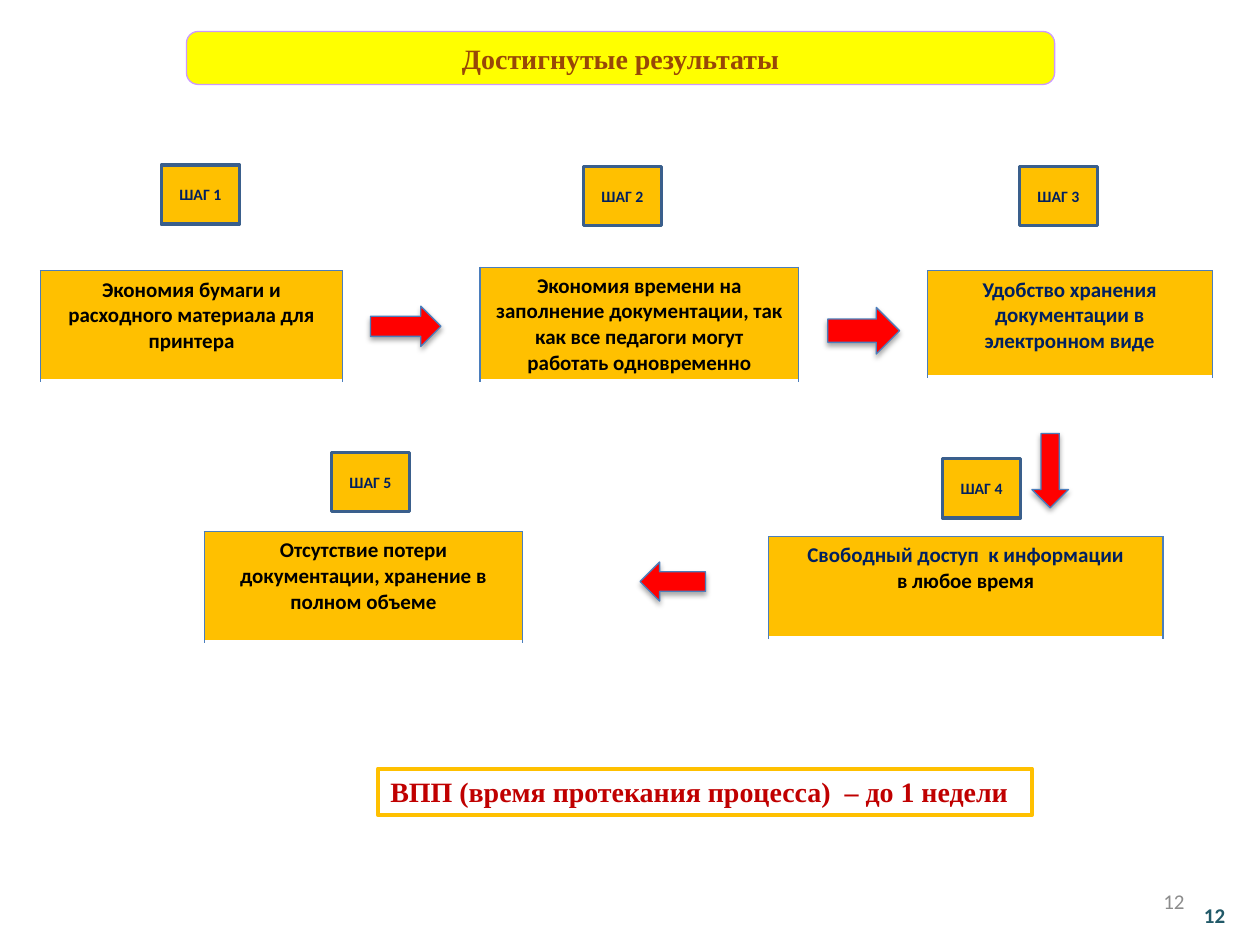
"""Build the slide of achieved results with five steps."""
import dataclasses

import lxml.etree
import pptx
import pptx.dml.color
import pptx.enum.shapes
import pptx.enum.text
import pptx.oxml.ns
import pptx.util

Inches = pptx.util.Inches
Shape = pptx.enum.shapes.MSO_SHAPE
Align = pptx.enum.text.PP_ALIGN
Anchor = pptx.enum.text.MSO_ANCHOR


@dataclasses.dataclass(frozen=True)
class Theme:
    """Colours, fonts and sizes of the slide."""

    body_font: str = "Calibri"
    display_font: str = "Times New Roman"
    gold: str = "FFC000"
    yellow: str = "FFFF00"
    red: str = "FF0000"
    crimson: str = "C00000"
    brown: str = "984807"
    lilac: str = "CC99FF"
    navy: str = "002060"
    black: str = "000000"
    white: str = "FFFFFF"
    grey: str = "8C8C8C"
    teal: str = "215968"
    edge: str = "4B7EBC"
    step_edge: str = "3A5F8C"
    step_size: int = 9
    body_size: int = 12
    display_size: int = 16


def rgb(colour):
    """Turn a hex string into a colour."""
    return pptx.dml.color.RGBColor.from_string(colour)


def add_child(parent, tag, **attributes):
    """Append a DrawingML element and return it."""
    child = lxml.etree.SubElement(parent, pptx.oxml.ns.qn(tag))
    for name, value in attributes.items():
        child.set(name, str(value))
    return child


class SlideBuilder:
    """Draws elements on one slide in one style."""

    def __init__(self, page, theme):
        """Keep the slide and the theme."""
        self.page = page
        self.theme = theme

    def add_lines(self, frame, lines, align=Align.CENTER, **font_format):
        """Set lines of (text, colour) as paragraphs."""
        values = {"name": self.theme.body_font, "bold": True, **font_format}
        values["size"] = pptx.util.Pt(values["size"])
        frame.word_wrap = True
        for index, (text, colour) in enumerate(lines):
            para = frame.add_paragraph() if index else frame.paragraphs[0]
            para.alignment = align
            span = para.add_run()
            span.text = text
            for name, value in values.items():
                setattr(span.font, name, value)
            span.font.color.rgb = rgb(colour)

    def shape(self, kind, place, fill, edge, width):
        """Add a preset shape without a shadow."""
        box = self.page.shapes.add_shape(kind, *map(Inches, place))
        box.shadow.inherit = False
        if fill:
            box.fill.solid()
            box.fill.fore_color.rgb = rgb(fill)
        else:
            box.fill.background()
        box.line.color.rgb = rgb(edge)
        box.line.width = pptx.util.Pt(width)
        return box

    def step(self, number, left, top):
        """Add a step label."""
        theme = self.theme
        box = self.shape(Shape.RECTANGLE, (left, top, 0.62, 0.47), theme.gold, theme.step_edge, 2)
        self.add_lines(box.text_frame, [(f"ШАГ {number}", theme.navy)], size=theme.step_size)

    def banner(self, kind, place, text, colour, fill, edge, width, align):
        """Add a framed line of display text."""
        box = self.shape(kind, place, fill, edge, width)
        box.text_frame.vertical_anchor = Anchor.TOP
        self.add_lines(box.text_frame, [(text, colour)], align,
                       name=self.theme.display_font, size=self.theme.display_size)
        return box

    def arrow(self, place, rotation):
        """Add a red block arrow with a soft shadow."""
        box = self.shape(Shape.RIGHT_ARROW, place, self.theme.red, self.theme.edge, 0.75)
        box.rotation = rotation
        effects = box._element.spPr.find(pptx.oxml.ns.qn("a:effectLst"))
        shadow = add_child(effects, "a:outerShdw", blurRad=pptx.util.Pt(3.1),
                           dist=pptx.util.Pt(1.8), dir=5400000, rotWithShape=0)
        colour = add_child(shadow, "a:srgbClr", val=self.theme.black)
        add_child(colour, "a:alpha", val=35000)

    def card(self, place, lines):
        """Add a one-cell table with a result."""
        theme = self.theme
        table = self.page.shapes.add_table(1, 1, *map(Inches, place)).table
        table.first_row = table.horz_banding = False
        cell = table.cell(0, 0)
        properties = cell._tc.get_or_add_tcPr()
        for side in "LRTB":
            colour, width = (theme.white, 2) if side == "B" else (theme.edge, 0.75)
            line = add_child(properties, f"a:ln{side}", w=pptx.util.Pt(width))
            add_child(add_child(line, "a:solidFill"), "a:srgbClr", val=colour)
        cell.fill.solid()
        cell.fill.fore_color.rgb = rgb(theme.gold)
        self.add_lines(cell.text_frame, lines, size=theme.body_size)

    def page_number(self, place, colour, align, bold):
        """Add the page number."""
        box = self.page.shapes.add_textbox(*map(Inches, place))
        box.text_frame.vertical_anchor = Anchor.MIDDLE
        self.add_lines(box.text_frame, [("12", colour)], align,
                       size=self.theme.body_size, bold=bold)


def main():
    """Build and save the deck."""
    deck = pptx.Presentation()
    deck.slide_width, deck.slide_height = Inches(10), Inches(7.5)
    theme = Theme()
    builder = SlideBuilder(deck.slides.add_slide(deck.slide_layouts[6]), theme)

    builder.page_number((7.17, 6.95, 2.33, 0.4), theme.grey, Align.RIGHT, False)
    builder.page_number((9.45, 7.11, 0.38, 0.31), theme.teal, Align.CENTER, True)
    builder.banner(Shape.RECTANGLE, (3, 6.1, 5.19, 0.37),
                   "ВПП (время протекания процесса)  – до 1 недели",
                   theme.crimson, None, theme.gold, 2.25, Align.LEFT)
    title = builder.banner(Shape.ROUNDED_RECTANGLE, (1.48, 0.25, 6.89, 0.42),
                           "Достигнутые результаты",
                           theme.brown, theme.yellow, theme.lilac, 0.75, Align.CENTER)
    title.adjustments[0] = 0.22

    arrows = [
        ((2.94, 2.43, 0.56, 0.32), 0),
        ((6.57, 2.44, 0.57, 0.37), 0),
        ((8.04, 3.59, 0.59, 0.29), 90),
        ((5.08, 4.46, 0.52, 0.31), 180),
    ]
    for place, rotation in arrows:
        builder.arrow(place, rotation)

    steps = [
        ((1.28, 1.31), (0.32, 2.15, 2.4, 0.87),
         [("Экономия бумаги и расходного материала для принтера", theme.black)]),
        ((4.63, 1.32), (3.81, 2.12, 2.53, 0.9),
         [("Экономия времени на заполнение документации, так как все педагоги "
           "могут работать одновременно", theme.black)]),
        ((8.09, 1.32), (7.36, 2.15, 2.26, 0.84),
         [("Удобство хранения документации в электронном виде", theme.navy)]),
        ((7.48, 3.64), (6.1, 4.26, 3.13, 0.8),
         [("Свободный доступ  к информации", theme.navy), ("в любое время", theme.black)]),
        ((2.63, 3.59), (1.62, 4.22, 2.53, 0.87),
         [("Отсутствие потери документации, хранение в полном объеме", theme.black)]),
    ]
    for number, (label, place, lines) in enumerate(steps, 1):
        builder.card(place, lines)
        builder.step(number, *label)

    deck.save("out.pptx")


if __name__ == "__main__":
    main()
